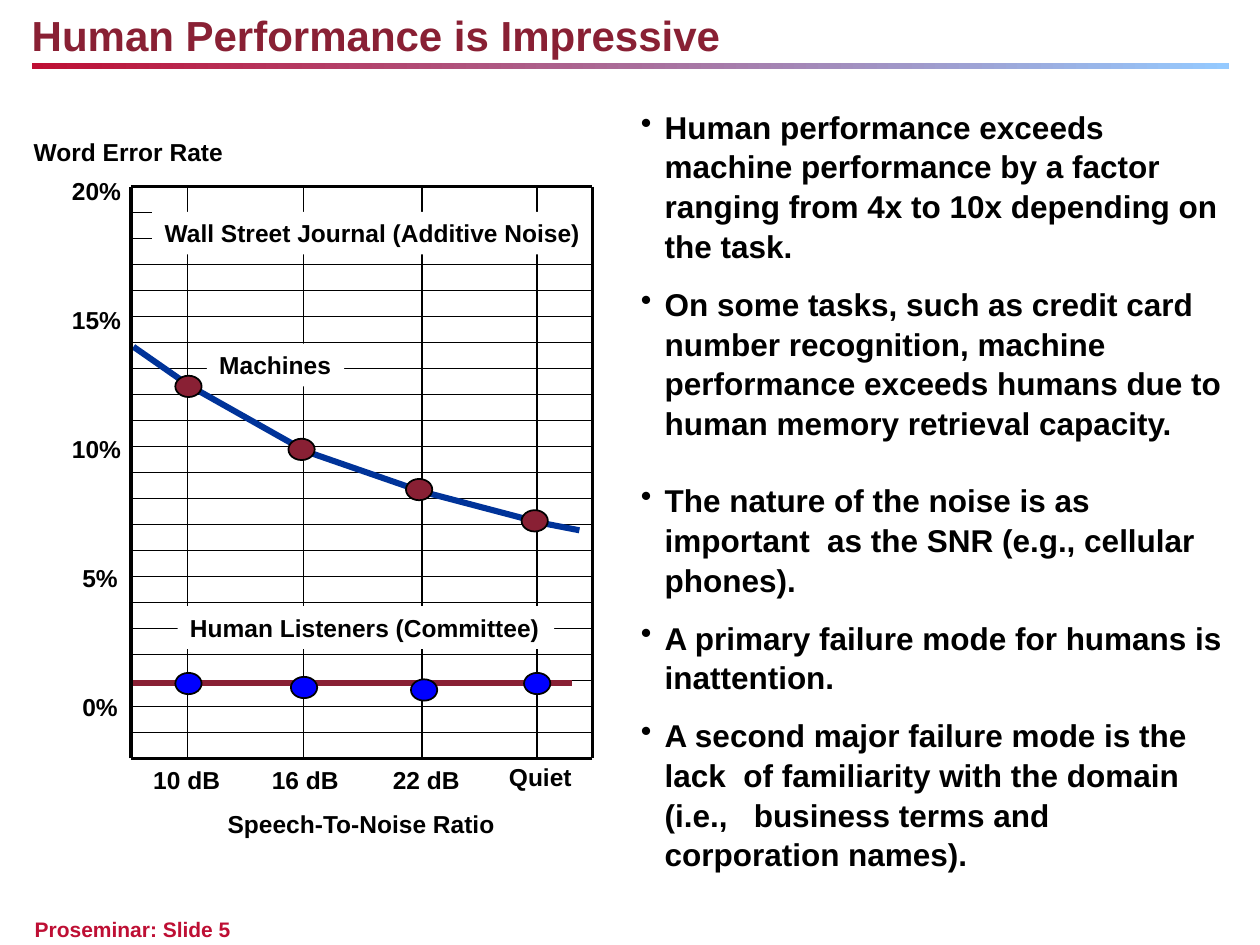
from dataclasses import dataclass
from itertools import pairwise

from lxml import etree
from pptx import Presentation
from pptx.dml.color import RGBColor
from pptx.enum.shapes import MSO_CONNECTOR, MSO_SHAPE
from pptx.enum.text import MSO_AUTO_SIZE, PP_ALIGN
from pptx.oxml.ns import qn
from pptx.util import Cm, Pt

STRAIGHT = MSO_CONNECTOR.STRAIGHT
RECTANGLE, OVAL = MSO_SHAPE.RECTANGLE, MSO_SHAPE.OVAL
FIT_SHAPE = MSO_AUTO_SIZE.SHAPE_TO_FIT_TEXT
LEFT = PP_ALIGN.LEFT


@dataclass(frozen=True)
class Theme:
    font: str = "Arial"
    black: RGBColor = RGBColor(0, 0, 0)
    white: RGBColor = RGBColor(255, 255, 255)
    maroon: RGBColor = RGBColor(0x89, 0x20, 0x34)
    red: RGBColor = RGBColor(0xBE, 0x0F, 0x34)
    sky: RGBColor = RGBColor(0x95, 0xCA, 0xFF)
    navy: RGBColor = RGBColor(0x00, 0x33, 0x99)
    blue: RGBColor = RGBColor(0, 0, 255)
    title_size: int = 24
    body_size: int = 18
    label_size: int = 14
    footer_size: int = 12
    thin: float = 1
    frame: float = 2
    curve: float = 3.5


THEME = Theme()

# Plot geometry in centimetres
PLOT_LEFT, PLOT_RIGHT, PLOT_TOP, PLOT_BOTTOM = 2.64, 11.94, 3.76, 15.29
GRID_COLUMNS = (3.78, 6.12, 8.51, 10.82)
GRID_ROWS = 22
LABEL_HEIGHT = 0.86
MARKER_WIDTH, MARKER_HEIGHT = 0.53, 0.43

MACHINE_CURVE = [(2.69, 6.99), (3.81, 7.77), (6.17, 9.1),
                 (8.51, 9.91), (10.9, 10.54), (11.68, 10.69)]
MACHINE_MARKERS = [(3.8, 7.79), (6.08, 9.06), (8.45, 9.87), (10.78, 10.5)]
HUMAN_LINE = [(PLOT_LEFT, 13.77), (11.53, 13.77)]
HUMAN_MARKERS = [(3.8, 13.78), (6.13, 13.86), (8.55, 13.91), (10.83, 13.78)]

# Text, left, top, width
AXIS_LABELS = [
    ("10 dB", 2.84, 15.29, 1.85),
    ("16 dB", 5.23, 15.29, 1.85),
    ("22 dB", 7.67, 15.29, 1.85),
    ("Quiet", 10.01, 15.24, 1.78),
    ("Word Error Rate", 0.43, 2.64, 4.34),
    ("Speech-To-Noise Ratio", 4.34, 16.18, 5.92),
]
PLOT_LABELS = [
    ("Wall Street Journal (Additive Noise)", 3.07, 4.27, 8.92),
    ("Machines", 4.17, 6.93, 2.77),
    ("Human Listeners (Committee)", 3.58, 12.22, 7.59),
]

# Space before in points, text
BULLETS = [
    (0, "Human performance exceeds machine performance by a factor ranging "
        "from 4x to 10x depending on the task."),
    (10.5, "On some tasks, such as credit card number recognition, machine "
           "performance exceeds humans due to human memory retrieval capacity."),
    (21.5, "The nature of the noise is as important  as the SNR "
           "(e.g., cellular phones)."),
    (10.5, "A primary failure mode for humans is inattention."),
    (10.5, "A second major failure mode is the lack  of familiarity with the "
           "domain (i.e.,   business terms and corporation names)."),
]


def set_font(paragraph, size, color):
    font = paragraph.font
    font.name, font.size, font.bold = THEME.font, Pt(size), True
    font.color.rgb = color


def add_heading(shapes, text, left, top, width, height, size, color):
    """Add a single line of text in a box without insets."""
    box = shapes.add_textbox(Cm(left), Cm(top), Cm(width), Cm(height))
    frame = box.text_frame
    frame.margin_left = frame.margin_right = 0
    frame.margin_top = frame.margin_bottom = 0
    frame.word_wrap = True
    frame.auto_size = FIT_SHAPE
    frame.text = text
    set_font(frame.paragraphs[0], size, color)


def add_title_rule(shapes):
    rule = shapes.add_shape(RECTANGLE, Cm(0.64), Cm(1.27), Cm(24.13), Cm(0.13))
    rule.shadow.inherit = False
    rule.line.fill.background()
    rule.fill.gradient()
    rule.fill.gradient_angle = 0
    for stop, color in zip(rule.fill.gradient_stops, (THEME.red, THEME.sky)):
        stop.color.rgb = color


def add_bullets(shapes):
    box = shapes.add_textbox(Cm(12.67), Cm(2.01), Cm(12.42), Cm(15.27))
    frame = box.text_frame
    frame.word_wrap = True
    frame.auto_size = FIT_SHAPE
    for index, (space, text) in enumerate(BULLETS):
        paragraph = frame.add_paragraph() if index else frame.paragraphs[0]
        paragraph.text = text
        paragraph.line_spacing = 1.05
        if space:
            paragraph.space_before = Pt(space)
        properties = paragraph._p.get_or_add_pPr()
        properties.set("marL", str(Cm(0.48)))
        properties.set("indent", str(-Cm(0.48)))
        etree.SubElement(properties, qn("a:buChar"), char="•")
        set_font(paragraph, THEME.body_size, THEME.black)


def add_line(shapes, start, end, color, width):
    line = shapes.add_connector(STRAIGHT, *map(Cm, start + end))
    line.line.color.rgb = color
    line.line.width = Pt(width)
    etree.SubElement(line._element.spPr, qn("a:effectLst"))


def add_polyline(shapes, points, color, width):
    for start, end in pairwise(points):
        add_line(shapes, start, end, color, width)


def add_label(shapes, text, left, top, width, fill=None):
    """Add a chart label, on a filled rectangle when a fill is given."""
    place = Cm(left), Cm(top), Cm(width), Cm(LABEL_HEIGHT)
    if fill is None:
        label = shapes.add_textbox(*place)
    else:
        label = shapes.add_shape(RECTANGLE, *place)
        label.shadow.inherit = False
        label.fill.solid()
        label.fill.fore_color.rgb = fill
        label.line.fill.background()
    frame = label.text_frame
    frame.word_wrap = False
    frame.auto_size = FIT_SHAPE
    frame.text = text
    frame.paragraphs[0].alignment = LEFT
    set_font(frame.paragraphs[0], THEME.label_size, THEME.black)


def add_markers(shapes, centers, color):
    for x, y in centers:
        marker = shapes.add_shape(
            OVAL, Cm(x - MARKER_WIDTH / 2), Cm(y - MARKER_HEIGHT / 2),
            Cm(MARKER_WIDTH), Cm(MARKER_HEIGHT))
        marker.shadow.inherit = False
        marker.fill.solid()
        marker.fill.fore_color.rgb = color
        marker.line.color.rgb = THEME.black
        marker.line.width = Pt(THEME.thin)


def add_grid(shapes):
    step = (PLOT_BOTTOM - PLOT_TOP) / GRID_ROWS
    for row in range(GRID_ROWS + 1):
        y = PLOT_TOP + row * step
        add_line(shapes, (PLOT_LEFT, y), (PLOT_RIGHT, y), THEME.black, THEME.thin)
    for x in GRID_COLUMNS:
        add_line(shapes, (x, PLOT_TOP), (x, PLOT_BOTTOM), THEME.black, THEME.thin)


def add_error_rate_plot(shapes):
    add_grid(shapes)
    for index in range(5):
        left, width = (1.41, 1.24) if index < 2 else (1.2, 1.5)
        add_label(shapes, f"{5 * index}%", left, 13.82 - 2.6 * index, width)
    for label in AXIS_LABELS:
        add_label(shapes, *label)
    for label in PLOT_LABELS:
        add_label(shapes, *label, fill=THEME.white)
    add_polyline(shapes, HUMAN_LINE, THEME.maroon, THEME.curve)
    add_markers(shapes, HUMAN_MARKERS, THEME.blue)
    add_polyline(shapes, MACHINE_CURVE, THEME.navy, THEME.curve)
    add_markers(shapes, MACHINE_MARKERS, THEME.maroon)
    corners = [(PLOT_LEFT, PLOT_TOP), (PLOT_RIGHT, PLOT_TOP),
               (PLOT_RIGHT, PLOT_BOTTOM), (PLOT_LEFT, PLOT_BOTTOM)]
    add_polyline(shapes, corners + corners[:1], THEME.black, THEME.frame)


def main():
    presentation = Presentation()
    presentation.slide_width, presentation.slide_height = Cm(25.4), Cm(19.05)
    slide = presentation.slides.add_slide(presentation.slide_layouts[6])
    shapes = slide.shapes
    add_title_rule(shapes)
    add_heading(shapes, "Proseminar: Slide 5", 0.7, 18.47, 22.66, 0.51,
                THEME.footer_size, THEME.red)
    add_heading(shapes, "Human Performance is Impressive", 0.64, 0.2, 24.08, 1.02,
                THEME.title_size, THEME.maroon)
    add_bullets(shapes)
    add_error_rate_plot(shapes.add_group_shape().shapes)
    presentation.save("out.pptx")


if __name__ == "__main__":
    main()
